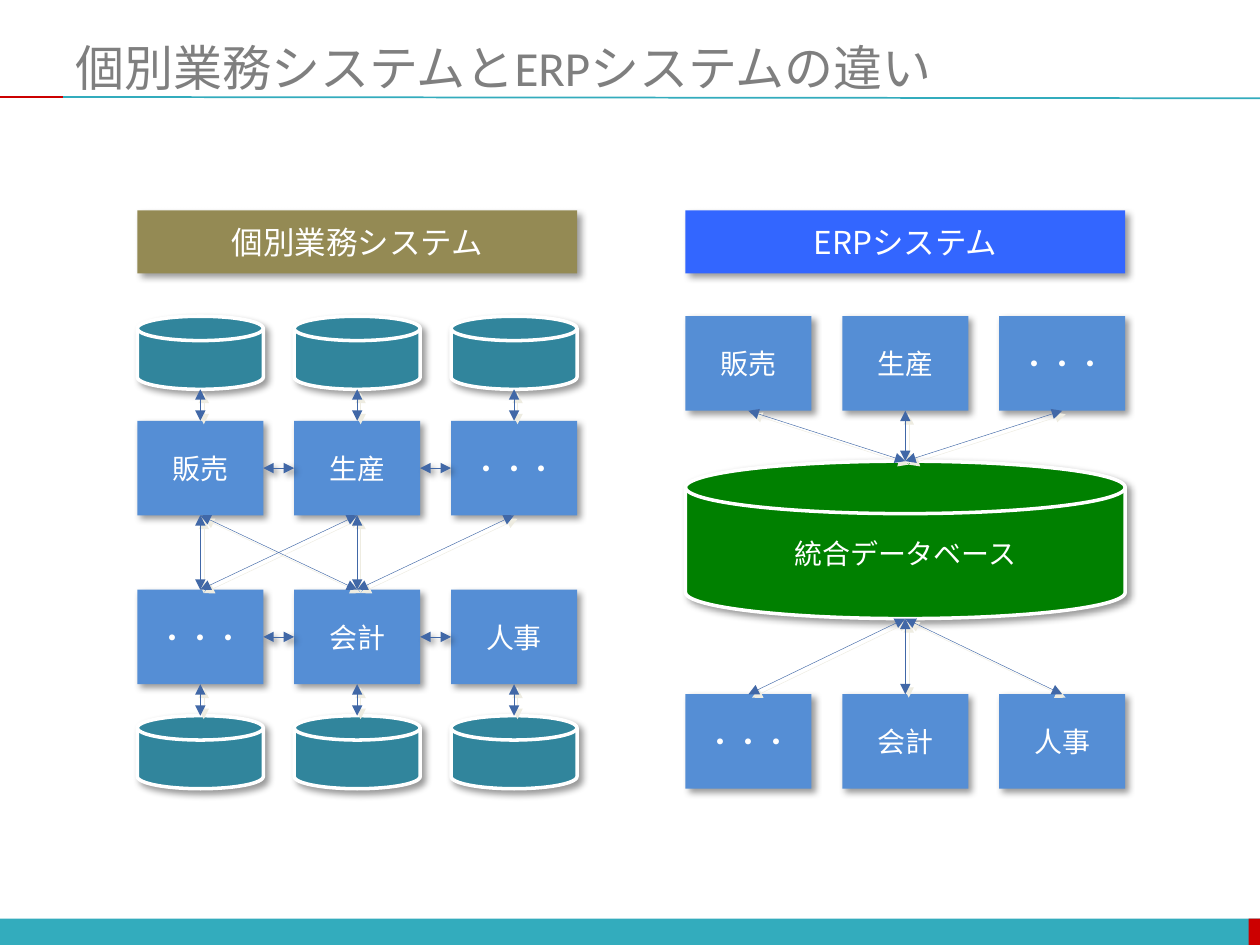
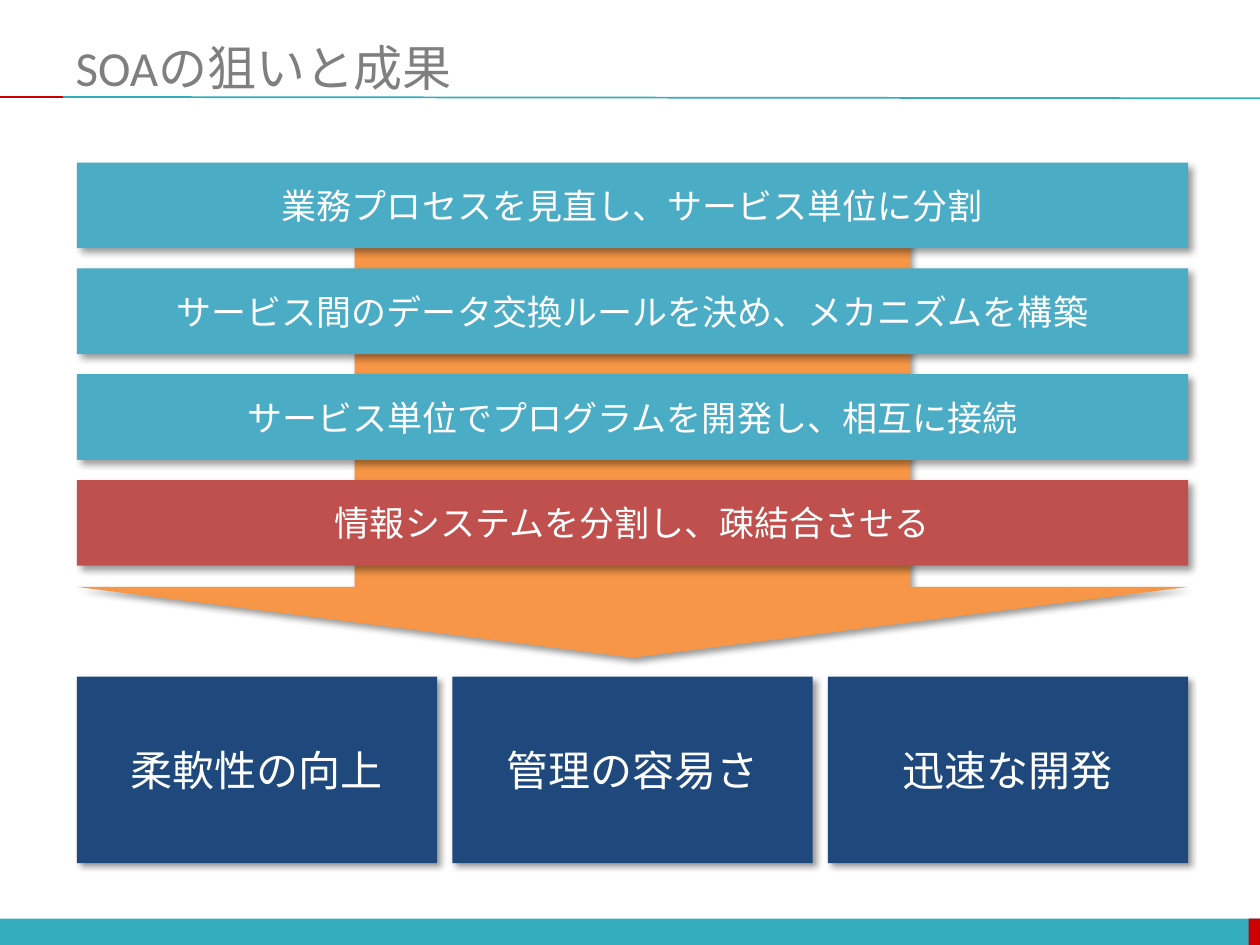
from lxml.etree import SubElement
from pptx import Presentation
from pptx.dml.color import RGBColor
from pptx.enum.shapes import MSO_CONNECTOR as LINE, MSO_SHAPE as SHAPE
from pptx.enum.text import MSO_ANCHOR as ANCHOR, MSO_AUTO_SIZE as FIT, PP_ALIGN as ALIGN
from pptx.oxml.ns import qn
from pptx.util import Inches, Pt

COLORS = {
    "white": "FFFFFF", "black": "000000", "cream": "EEECE1", "gray": "7F7F7F",
    "teal": "33ACBD", "red": "CC0000", "green": "008000", "sea": "31859C",
    "sky": "558ED5", "steel": "4168A7", "olive": "948A54", "blue": "3366FF",
    "aqua": "4BACC6", "brick": "C0504D", "orange": "F79646", "navy": "1F497D",
}
LATIN, ASIAN = "Calibri", "Noto Sans CJK JP"

# Colour, opacity %, blur and distance in points
SOFT = ("black", 40, 4, 3)
PALE = ("cream", 100, 0, 2.8)

# Shared by both slides
BANDS = [((0, 7.29, 10, 0.22), "teal"), ((9.91, 7.29, 0.1, 0.22), "red")]
RULES = [((0.5, 0.77), (10, 0.78), "teal"), ((0, 0.77), (0.5, 0.77), "red")]
TITLE_BOX = {"left": 0.5, "top": 0.3, "width": 9.5, "height": 0.46}

# Slide 1
SYSTEMS = "個別業務システムとERPシステムの違い"
HEADS = [(1.09, "個別業務システム", "olive"), (5.44, "ERPシステム", "blue")]
UPPER = ["販売", "生産", "・・・"]
LOWER = ["・・・", "会計", "人事"]
STORE = "統合データベース"
CROSS = [(0, 0), (0, 1), (1, 0), (1, 1), (2, 1)]  # upper column, lower column

# Slide 2
SOA = "SOAの狙いと成果"
STEPS = [
    ("業務プロセスを見直し、サービス単位に分割", "aqua"),
    ("サービス間のデータ交換ルールを決め、メカニズムを構築", "aqua"),
    ("サービス単位でプログラムを開発し、相互に接続", "aqua"),
    ("情報システムを分割し、疎結合させる", "brick"),
]
GAINS = ["柔軟性の向上", "管理の容易さ", "迅速な開発"]


def paint(name):
    return RGBColor.from_string(COLORS[name])


def shade(shape, shadow):
    """Replace the theme shadow; call after the line is set."""
    effects = SubElement(shape.element.spPr, qn("a:effectLst"))
    if shadow:
        color, alpha, blur, dist = shadow
        outer = SubElement(effects, qn("a:outerShdw"), blurRad=str(Pt(blur)),
                           dist=str(Pt(dist)), dir="2700000", algn="tl", rotWithShape="0")
        tint = SubElement(outer, qn("a:srgbClr"), val=COLORS[color])
        SubElement(tint, qn("a:alpha"), val=str(alpha * 1000))


def write(frame, text, size, face=LATIN, color="white", align=ALIGN.CENTER):
    frame.vertical_anchor = ANCHOR.MIDDLE
    para = frame.paragraphs[0]
    para.alignment = align
    run = para.add_run()
    run.text = text
    for key, value in {"name": face, "size": Pt(size), "bold": False}.items():
        setattr(run.font, key, value)
    run.font.color.rgb = paint(color)
    SubElement(run.font._element, qn("a:ea"), typeface=ASIAN)


def draw(slide, kind, box, fill, edge=None, shadow=SOFT):
    shape = slide.shapes.add_shape(kind, *map(Inches, box))
    shape.fill.solid()
    shape.fill.fore_color.rgb = paint(fill)
    if edge:
        shape.line.color.rgb = paint(edge)
        shape.line.width = Pt(2)
    else:
        shape.line.fill.background()
    shade(shape, shadow)
    return shape


def block(slide, box, fill, text, size, face=LATIN):
    shape = draw(slide, SHAPE.ROUNDED_RECTANGLE, box, fill)
    shape.adjustments[0] = 0
    write(shape.text_frame, text, size, face)


def disk(slide, box, fill):
    return draw(slide, SHAPE.FLOWCHART_MAGNETIC_DISK, box, fill, "white")


def rule(slide, start, end, color, width=1, shadow=None):
    line = slide.shapes.add_connector(LINE.STRAIGHT, *map(Inches, start + end))
    line.line.color.rgb = paint(color)
    line.line.width = Pt(width)
    shade(line, shadow)
    return line


def arrow(slide, start, end, shadow=PALE):
    """Thin line with a triangle at both ends."""
    line = rule(slide, start, end, "steel", 0.25, shadow)
    for end_tag in ("a:headEnd", "a:tailEnd"):
        SubElement(line.line._get_or_add_ln(), qn(end_tag), type="triangle")


def set_frame(layout, slide):
    """Move the bands and rules drawn on a slide to its layout."""
    parts = [draw(slide, SHAPE.RECTANGLE, box, fill, shadow=None) for box, fill in BANDS]
    parts += [rule(slide, *spec) for spec in RULES]
    for part in parts:
        layout.shapes.element.append(part.element)
    for key, value in TITLE_BOX.items():
        setattr(layout.placeholders[0], key, Inches(value))


def set_title(slide, text):
    frame = slide.shapes.title.text_frame
    frame.auto_size = FIT.NONE
    write(frame, text, 28, color="gray", align=ALIGN.LEFT)


def build_systems(slide):
    set_title(slide, SYSTEMS)
    wide, high, step, full = 1, 0.75, 1.245, 3.49
    left, right = ([x + i * step for i in range(3)] for x, *_ in HEADS)
    top, up, low, base = 2.51, 3.34, 4.68, 5.68   # rows of the left side
    disk_high = 0.58
    store_top, store_high, last = 3.66, 1.25, 5.51  # rows of the right side

    store = disk(slide, (right[0], store_top, full, store_high), "green")
    write(store.text_frame, STORE, 16, ASIAN)
    for x, text, fill in HEADS:
        block(slide, (x, 1.67, full, 0.5), fill, text, 18, ASIAN)
    for cols, y, names in [(left, up, UPPER), (left, low, LOWER),
                           (right, top, UPPER), (right, last, LOWER)]:
        for x, name in zip(cols, names):
            block(slide, (x, y, wide, high), "sky", name, 16, ASIAN)
    for y in (top, base):
        for x in left:
            disk(slide, (x, y, wide, disk_high), "sea")

    mids = [x + wide / 2 for x in left]
    for x in mids:
        arrow(slide, (x, top + disk_high), (x, up))
        arrow(slide, (x, low + high), (x, base))
    for a, b in CROSS:
        arrow(slide, (mids[a], up + high), (mids[b], low))
    for y in (up, low):
        for x, after in zip(left, left[1:]):
            arrow(slide, (x + wide, y + high / 2), (after, y + high / 2), SOFT)
    hub = right[0] + full / 2
    for x in right:
        arrow(slide, (x + wide / 2, top + high), (hub, store_top))
        arrow(slide, (x + wide / 2, last), (hub, store_top + store_high))


def build_soa(slide):
    set_title(slide, SOA)
    left, full = 0.61, 8.82
    down = draw(slide, SHAPE.DOWN_ARROW, (left, 1.62, full, 3.6), "orange")
    down.adjustments[0], down.adjustments[1] = 0.5, 0.156
    for i, (text, fill) in enumerate(STEPS):
        block(slide, (left, 1.29 + i * 0.84, full, 0.68), fill, text, 20)
    wide = 2.86
    step = (full - wide) / (len(GAINS) - 1)
    for i, text in enumerate(GAINS):
        block(slide, (left + i * step, 5.37, wide, 1.48), "navy", text, 24)


def main():
    deck = Presentation()
    deck.slide_width, deck.slide_height = Inches(10), Inches(7.5)
    layout = deck.slide_layouts[5]
    first, second = (deck.slides.add_slide(layout) for _ in range(2))
    set_frame(layout, first)
    build_systems(first)
    build_soa(second)
    deck.save("out.pptx")


if __name__ == "__main__":
    main()
